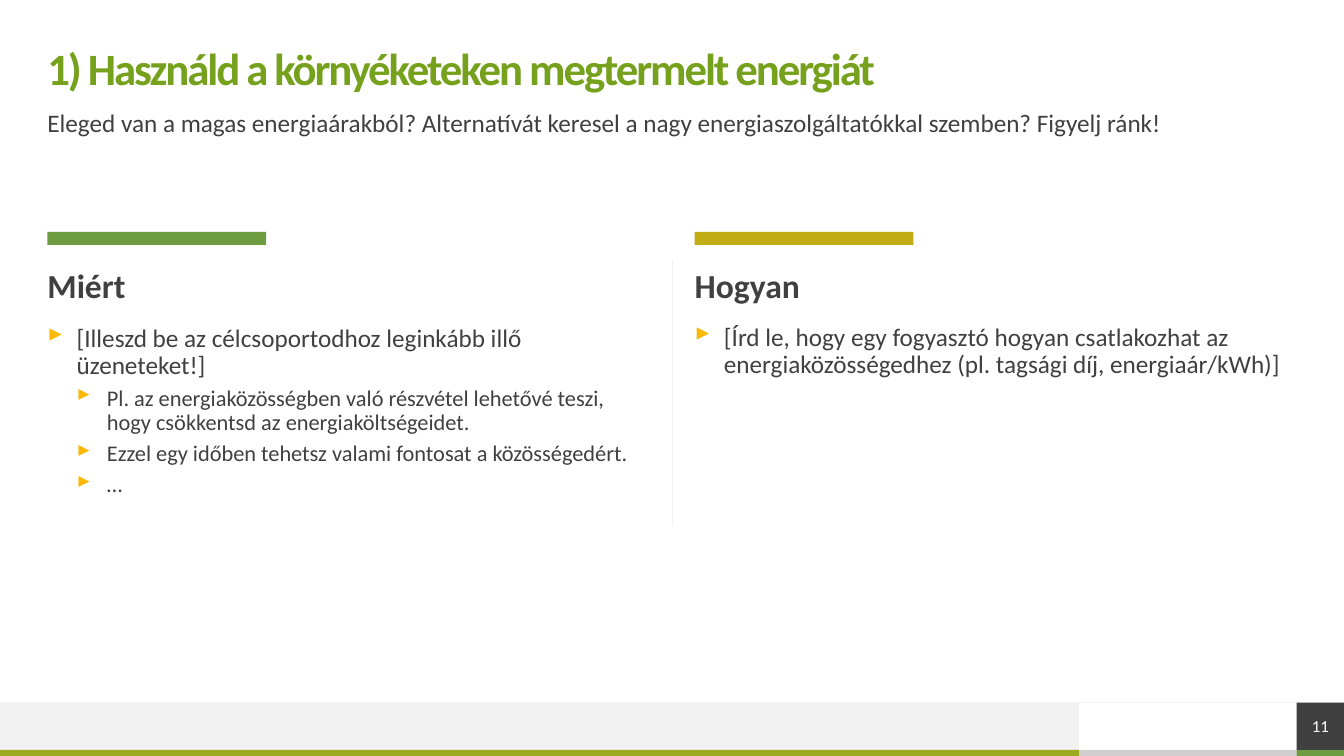
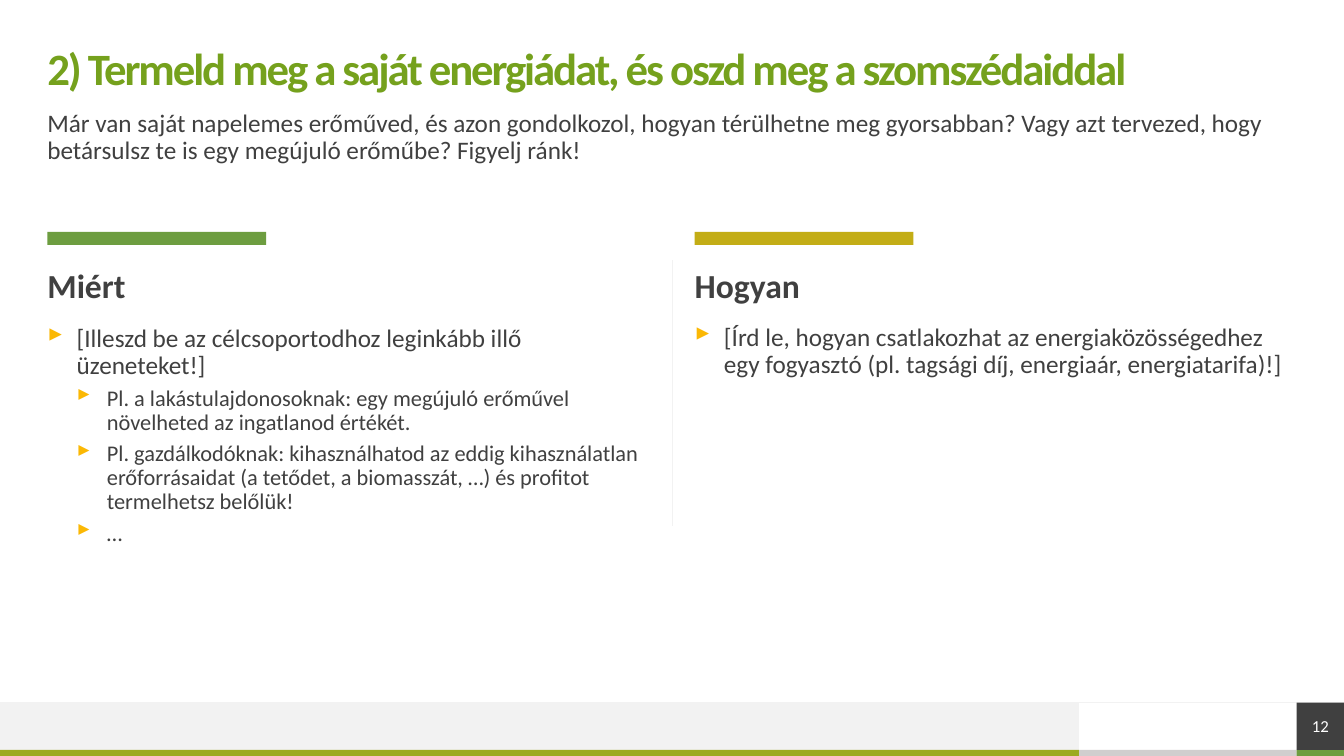
from dataclasses import dataclass

from lxml import etree
from pptx import Presentation
from pptx.dml.color import RGBColor
from pptx.enum.shapes import MSO_CONNECTOR, MSO_SHAPE
from pptx.enum.text import MSO_ANCHOR, PP_ALIGN
from pptx.oxml.ns import qn
from pptx.shapes.autoshape import Shape
from pptx.slide import Slide
from pptx.util import Inches, Pt

RECTANGLE = MSO_SHAPE.RECTANGLE
STRAIGHT = MSO_CONNECTOR.STRAIGHT
TOP, MIDDLE = MSO_ANCHOR.TOP, MSO_ANCHOR.MIDDLE
LEFT, CENTER = PP_ALIGN.LEFT, PP_ALIGN.CENTER


@dataclass(frozen=True)
class Theme:
    font: str = "Calibri"
    title: str = "75A11D"
    text: str = "404040"
    bullet: str = "FBB804"
    green: str = "6D9D40"
    gold: str = "C3AD16"
    lime: str = "9CAA20"
    silver: str = "D0CECE"
    pale: str = "F2F2F2"
    white: str = "FFFFFF"
    title_size: int = 32
    heading_size: int = 24
    body_size: int = 18
    detail_size: int = 16
    number_size: int = 12
    line_width: float = 0.5
    line_spacing: float = 0.9
    title_tracking: str = "-150"


@dataclass(frozen=True)
class Area:
    left: float
    top: float
    width: float
    height: float


@dataclass(frozen=True)
class Style:
    size: int
    color: str
    bold: bool = False
    align: PP_ALIGN = LEFT
    spacing: float = 1.0


@dataclass(frozen=True)
class Bullet:
    size: int
    level: int
    margin: float
    hanging: float
    space_before: int


@dataclass(frozen=True)
class Column:
    heading: str
    left: float
    list_top: float
    accent: str


@dataclass(frozen=True)
class Topic:
    number: int
    title: str
    lead: str
    message: str
    examples: tuple[str, ...]
    joining: str


THEME = Theme()
TITLE = Style(THEME.title_size, THEME.title, True, spacing=THEME.line_spacing)
HEADING = Style(THEME.heading_size, THEME.text, True, spacing=THEME.line_spacing)
LEAD = Style(THEME.body_size, THEME.text, spacing=THEME.line_spacing)
NUMBER = Style(THEME.number_size, THEME.white, align=CENTER)
MAIN = Bullet(THEME.body_size, 0, 0.29, 0.29, 10)
DETAIL = Bullet(THEME.detail_size, 1, 0.59, 0.3, 5)

PAGE_WIDTH, PAGE_HEIGHT = 13.33, 7.5
MARGIN = 0.47
CONTENT_WIDTH = 12.4
COLUMN_WIDTH = 5.98
ACCENT_WIDTH = 2.17
STRIP_HEIGHT = 0.06
STRIP_TOP = PAGE_HEIGHT - STRIP_HEIGHT
FOOTER_TOP = STRIP_TOP - MARGIN
NUMBER_LEFT = PAGE_WIDTH - MARGIN
BAND_WIDTH = 10.7

WHY = Column("Miért", MARGIN, 3.23, THEME.green)
HOW = Column("Hogyan", 6.89, 3.22, THEME.gold)

TOPICS = (
    Topic(
        11,
        "1) Használd a környéketeken megtermelt energiát",
        "Eleged van a magas energiaárakból? Alternatívát keresel a nagy "
        "energiaszolgáltatókkal szemben? Figyelj ránk!",
        "[Illeszd be az célcsoportodhoz leginkább illő üzeneteket!]",
        (
            "Pl. az energiaközösségben való részvétel lehetővé teszi, "
            "hogy csökkentsd az energiaköltségeidet.",
            "Ezzel egy időben tehetsz valami fontosat a közösségedért.",
            "…",
        ),
        "[Írd le, hogy egy fogyasztó hogyan csatlakozhat az "
        "energiaközösségedhez (pl. tagsági díj, energiaár/kWh)]",
    ),
    Topic(
        12,
        "2) Termeld meg a saját energiádat, és oszd meg a szomszédaiddal",
        "Már van saját napelemes erőműved, és azon gondolkozol, hogyan "
        "térülhetne meg gyorsabban? Vagy azt tervezed, hogy betársulsz te is "
        "egy megújuló erőműbe? Figyelj ránk!",
        "[Illeszd be az célcsoportodhoz leginkább illő üzeneteket!]",
        (
            "Pl. a lakástulajdonosoknak: egy megújuló erőművel "
            "növelheted az ingatlanod értékét.",
            "Pl. gazdálkodóknak: kihasználhatod az eddig kihasználatlan "
            "erőforrásaidat (a tetődet, a biomasszát, …) és profitot "
            "termelhetsz belőlük!",
            "…",
        ),
        "[Írd le, hogyan csatlakozhat az energiaközösségedhez egy fogyasztó "
        "(pl. tagsági díj, energiaár, energiatarifa)!]",
    ),
)


def place(area: Area) -> tuple[Inches, ...]:
    return tuple(map(Inches, (area.left, area.top, area.width, area.height)))


def add_block(page: Slide, area: Area, color: str) -> Shape:
    block = page.shapes.add_shape(RECTANGLE, *place(area))
    block.shadow.inherit = False
    block.fill.solid()
    block.fill.fore_color.rgb = RGBColor.from_string(color)
    block.line.fill.background()
    return block


def add_rule(page: Slide, left: float, top: float, right: float, bottom: float) -> None:
    rule = page.shapes.add_connector(
        STRAIGHT, Inches(left), Inches(top), Inches(right), Inches(bottom)
    )
    rule.line.color.rgb = RGBColor.from_string(THEME.pale)
    rule.line.width = Pt(THEME.line_width)
    etree.SubElement(rule._element.spPr, qn("a:effectLst"))


def set_frame(box: Shape, anchor: MSO_ANCHOR = TOP) -> None:
    frame = box.text_frame
    frame.word_wrap = True
    frame.vertical_anchor = anchor
    frame.margin_left = frame.margin_top = Inches(0)
    frame.margin_right = frame.margin_bottom = Inches(0)


def style_paragraph(para, style: Style) -> None:
    para.alignment = style.align
    para.line_spacing = style.spacing
    para.font.name = THEME.font
    para.font.size = Pt(style.size)
    para.font.bold = style.bold
    para.font.color.rgb = RGBColor.from_string(style.color)


def write_line(box: Shape, text: str, style: Style, anchor: MSO_ANCHOR = TOP) -> None:
    set_frame(box, anchor)
    para = box.text_frame.paragraphs[0]
    para.text = text
    style_paragraph(para, style)


def add_text(
    page: Slide, area: Area, text: str, style: Style, anchor: MSO_ANCHOR = TOP
) -> Shape:
    box = page.shapes.add_textbox(*place(area))
    write_line(box, text, style, anchor)
    return box


def add_bullet(para, bullet: Bullet) -> None:
    properties = para._p.get_or_add_pPr()
    properties.set("marL", str(Inches(bullet.margin)))
    properties.set("indent", str(-Inches(bullet.hanging)))
    color = etree.SubElement(properties, qn("a:buClr"))
    etree.SubElement(color, qn("a:srgbClr"), val=THEME.bullet)
    etree.SubElement(properties, qn("a:buChar"), char="▸")


def add_list(page: Slide, area: Area, message: str, examples: tuple[str, ...] = ()) -> None:
    box = page.shapes.add_textbox(*place(area))
    set_frame(box)
    frame = box.text_frame
    items = [(message, MAIN)] + [(example, DETAIL) for example in examples]
    for index, (text, bullet) in enumerate(items):
        para = frame.add_paragraph() if index else frame.paragraphs[0]
        para.text = text
        para.level = bullet.level
        add_bullet(para, bullet)
        if index:
            para.space_before = Pt(bullet.space_before)
        style_paragraph(para, Style(bullet.size, THEME.text, spacing=THEME.line_spacing))


def add_column(
    page: Slide, column: Column, message: str, examples: tuple[str, ...] = ()
) -> None:
    add_block(page, Area(column.left, 2.3, ACCENT_WIDTH, 0.13), column.accent)
    add_text(page, Area(column.left, 2.67, COLUMN_WIDTH, 0.39), column.heading, HEADING)
    add_list(page, Area(column.left, column.list_top, COLUMN_WIDTH, 2.4), message, examples)


def add_footer(page: Slide, number: int) -> None:
    silver_width = NUMBER_LEFT - BAND_WIDTH
    add_block(page, Area(BAND_WIDTH, STRIP_TOP, silver_width, STRIP_HEIGHT), THEME.silver)
    add_block(page, Area(0, FOOTER_TOP, BAND_WIDTH, MARGIN), THEME.pale)
    add_block(page, Area(0, STRIP_TOP, BAND_WIDTH, STRIP_HEIGHT), THEME.lime)
    add_block(page, Area(NUMBER_LEFT, STRIP_TOP, MARGIN, STRIP_HEIGHT), THEME.green)
    add_rule(page, PAGE_WIDTH, FOOTER_TOP, 0, FOOTER_TOP)
    badge = add_block(page, Area(NUMBER_LEFT, FOOTER_TOP, MARGIN, MARGIN), THEME.text)
    write_line(badge, str(number), NUMBER, MIDDLE)


def add_topic(page: Slide, topic: Topic) -> None:
    add_footer(page, topic.number)
    title = add_text(
        page, Area(MARGIN, 0.47, CONTENT_WIDTH, 0.47), topic.title, TITLE, MIDDLE
    )
    span = title.text_frame.paragraphs[0].runs[0]
    span._r.get_or_add_rPr().set("spc", THEME.title_tracking)
    add_text(page, Area(MARGIN, 1.1, CONTENT_WIDTH, 0.39), topic.lead, LEAD)
    add_column(page, WHY, topic.message, topic.examples)
    add_rule(page, 6.67, 2.58, 6.67, 5.22)
    add_column(page, HOW, topic.joining)


def main() -> None:
    deck = Presentation()
    deck.slide_width = Inches(PAGE_WIDTH)
    deck.slide_height = Inches(PAGE_HEIGHT)
    blank = deck.slide_layouts[6]
    for topic in TOPICS:
        add_topic(deck.slides.add_slide(blank), topic)
    deck.save("out.pptx")


if __name__ == "__main__":
    main()
